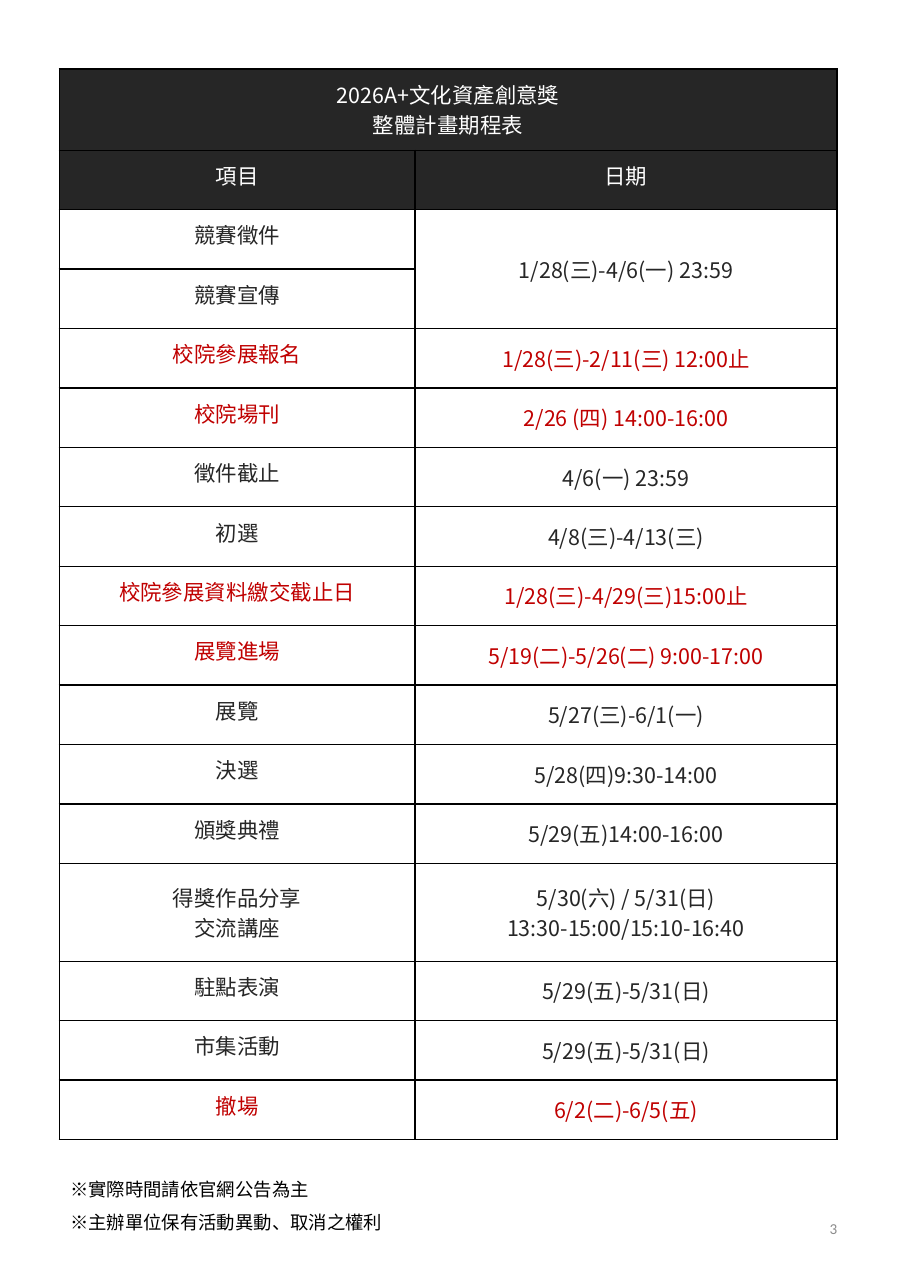
import pptx
import pptx.dml.color
import pptx.enum.text
import pptx.oxml
import pptx.oxml.ns
import pptx.util

Pt = pptx.util.Pt
RGBColor = pptx.dml.color.RGBColor
ALIGN = pptx.enum.text.PP_ALIGN
ANCHOR = pptx.enum.text.MSO_ANCHOR

WHITE = RGBColor(0xFF, 0xFF, 0xFF)
BLACK = RGBColor(0x00, 0x00, 0x00)
CHARCOAL = RGBColor(0x26, 0x26, 0x26)
RED = RGBColor(0xC0, 0x00, 0x00)
GRAY = RGBColor(0x8C, 0x8C, 0x8C)

CJK_FONT = "Noto Sans CJK SC"
ROW_HEIGHT = 38.85
HEADING_HEIGHT = 52.9
TALK_HEIGHT = 64
COLUMN_WIDTHS = (232.6, 275.8)

HEADING = ["2026A+文化資產創意獎", "整體計畫期程表"]
COLUMN_NAMES = ("項目", "日期")
SCHEDULE = [
    (["競賽徵件"], ["1/28(三)-4/6(一) 23:59"], CHARCOAL),
    (["競賽宣傳"], [], CHARCOAL),
    (["校院參展報名"], ["1/28(三)-2/11(三) 12:00止"], RED),
    (["校院場刊"], ["2/26 (四) 14:00-16:00"], RED),
    (["徵件截止"], ["4/6(一) 23:59"], CHARCOAL),
    (["初選"], ["4/8(三)-4/13(三)"], CHARCOAL),
    (["校院參展資料繳交截止日"], ["1/28(三)-4/29(三)15:00止"], RED),
    (["展覽進場"], ["5/19(二)-5/26(二) 9:00-17:00"], RED),
    (["展覽"], ["5/27(三)-6/1(一)"], CHARCOAL),
    (["決選"], ["5/28(四)9:30-14:00"], CHARCOAL),
    (["頒獎典禮"], ["5/29(五)14:00-16:00"], CHARCOAL),
    (["得獎作品分享", "交流講座"],
     ["5/30(六) / 5/31(日)", "13:30-15:00/15:10-16:40"], CHARCOAL),
    (["駐點表演"], ["5/29(五)-5/31(日)"], CHARCOAL),
    (["市集活動"], ["5/29(五)-5/31(日)"], CHARCOAL),
    (["撤場"], ["6/2(二)-6/5(五)"], RED),
]
NOTES = ["※實際時間請依官網公告為主", "※主辦單位保有活動異動、取消之權利"]


def write_lines(frame, lines, size, color, align, spacing, font=CJK_FONT):
    """Write each line as one formatted paragraph."""
    for index, line in enumerate(lines):
        paragraph = frame.add_paragraph() if index else frame.paragraphs[0]
        paragraph.alignment = align
        paragraph.line_spacing = spacing
        run = paragraph.add_run()
        run.text = line
        run.font.size = Pt(size)
        run.font.name = font
        run.font.color.rgb = color
        east_asian = pptx.oxml.parse_xml(
            f'<a:ea {pptx.oxml.ns.nsdecls("a")} typeface="{font}"/>')
        run.font._element.find(pptx.oxml.ns.qn("a:latin")).addnext(east_asian)


def add_text(slide, box, lines, size, color, align, spacing,
             font=CJK_FONT, anchor=ANCHOR.TOP):
    """Add a wrapped text box."""
    frame = slide.shapes.add_textbox(*map(Pt, box)).text_frame
    frame.word_wrap = True
    frame.vertical_anchor = anchor
    write_lines(frame, lines, size, color, align, spacing, font)


def add_borders(cell):
    """Draw a one-point line on all four sides of a cell."""
    properties = cell._tc.get_or_add_tcPr()
    for side in ("lnL", "lnR", "lnT", "lnB"):
        properties.append(pptx.oxml.parse_xml(
            f'<a:{side} {pptx.oxml.ns.nsdecls("a")} w="{Pt(1)}">'
            f'<a:solidFill><a:srgbClr val="{BLACK}"/></a:solidFill></a:{side}>'))


def fill_cell(cell, lines, color, background, margins, anchor):
    """Set the text, margins, anchor and fill of a cell."""
    across, down = map(Pt, margins)
    cell.margin_left = cell.margin_right = across
    cell.margin_top = cell.margin_bottom = down
    cell.vertical_anchor = anchor
    cell.fill.solid()
    cell.fill.fore_color.rgb = background
    write_lines(cell.text_frame, lines, 14, color, ALIGN.CENTER, Pt(20))


def add_schedule(slide):
    """Build the schedule table with its two header rows."""
    heights = [HEADING_HEIGHT, ROW_HEIGHT] + [
        TALK_HEIGHT if len(items) > 1 else ROW_HEIGHT for items, _, _ in SCHEDULE]
    table = slide.shapes.add_table(
        len(heights), len(COLUMN_WIDTHS), Pt(38.7), Pt(45.1),
        Pt(sum(COLUMN_WIDTHS)), Pt(sum(heights))).table
    table.first_row = table.horz_banding = False
    for column, width in zip(table.columns, COLUMN_WIDTHS):
        column.width = Pt(width)
    for row, height in zip(table.rows, heights):
        row.height = Pt(height)
    for cell in table.iter_cells():
        add_borders(cell)

    wide, narrow = (6.5, 6.5), (2.2, 1.4)
    headers = [(HEADING, [])] + [tuple([name] for name in COLUMN_NAMES)]
    for row, names in enumerate(headers):
        for column, lines in enumerate(names):
            fill_cell(table.cell(row, column), lines, WHITE, CHARCOAL, wide, ANCHOR.TOP)
    for row, (items, dates, color) in enumerate(SCHEDULE, start=len(headers)):
        item_anchor = ANCHOR.MIDDLE if len(items) > 1 else ANCHOR.TOP
        fill_cell(table.cell(row, 0), items, color, WHITE, wide, item_anchor)
        fill_cell(table.cell(row, 1), dates, color, WHITE, narrow, ANCHOR.MIDDLE)
    table.cell(0, 0).merge(table.cell(0, 1))
    table.cell(2, 1).merge(table.cell(3, 1))


def main():
    """Build and save the schedule slide."""
    deck = pptx.Presentation()
    deck.slide_width, deck.slide_height = Pt(595.44), Pt(841.68)
    slide = deck.slides.add_slide(deck.slide_layouts[6])
    add_text(slide, (420.5, 780.5, 133.9, 44.6), ["3"], 9.9, GRAY,
             ALIGN.RIGHT, 1.0, "Calibri", ANCHOR.MIDDLE)
    add_schedule(slide)
    add_text(slide, (38.9, 758.9, 547.2, 48.2), NOTES, 12, BLACK, ALIGN.LEFT, 1.5)
    deck.save("out.pptx")


if __name__ == "__main__":
    main()
